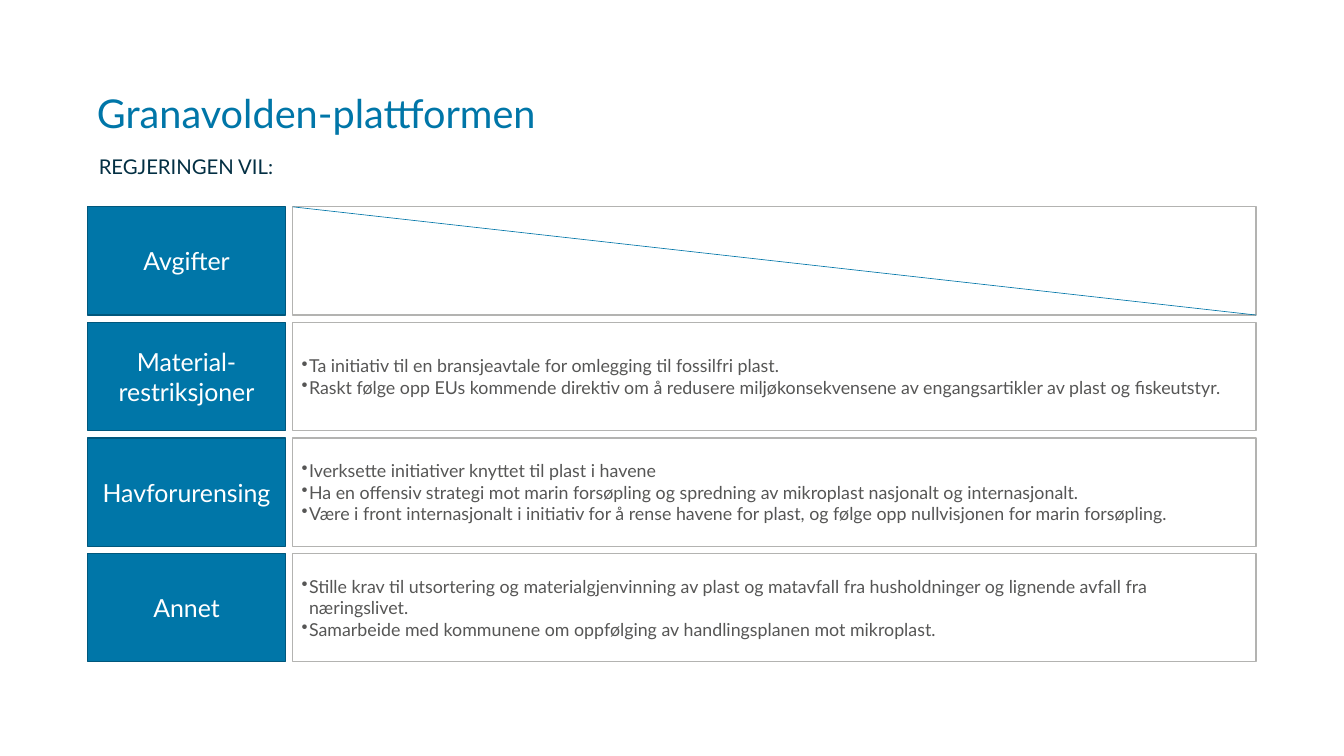
from lxml import etree
from pptx import Presentation
from pptx.dml.color import RGBColor
from pptx.enum.shapes import MSO_CONNECTOR, MSO_SHAPE
from pptx.enum.text import MSO_ANCHOR, MSO_AUTO_SIZE, PP_ALIGN
from pptx.oxml.ns import qn
from pptx.util import Inches, Pt

RECTANGLE = MSO_SHAPE.RECTANGLE
STRAIGHT = MSO_CONNECTOR.STRAIGHT
MIDDLE = MSO_ANCHOR.MIDDLE
NO_AUTOFIT = MSO_AUTO_SIZE.NONE
LEFT, CENTER = PP_ALIGN.LEFT, PP_ALIGN.CENTER

FONT = "Lato"
COLORS = {
    "blue": "0076A8",
    "blue_border": "00577C",
    "navy": "032F43",
    "gray": "565655",
    "gray_border": "B3B3B1",
    "white": "FFFFFF",
}

SLIDE_WIDTH, SLIDE_HEIGHT = 14.69, 8.26
MARGIN = 0.96
CONTENT_WIDTH = SLIDE_WIDTH - 2 * MARGIN
LABEL_WIDTH = 2.16
GAP = 0.08
BULLET_INDENT = 0.08

MEASURES = [
    ("Avgifter", []),
    ("Material-restriksjoner", [
        "Ta initiativ til en bransjeavtale for omlegging til fossilfri plast.",
        "Raskt følge opp EUs kommende direktiv om å redusere miljøkonsekvensene "
        "av engangsartikler av plast og fiskeutstyr.",
    ]),
    ("Havforurensing", [
        "Iverksette initiativer knyttet til plast i havene",
        "Ha en offensiv strategi mot marin forsøpling og spredning av mikroplast "
        "nasjonalt og internasjonalt.",
        "Være i front internasjonalt i initiativ for å rense havene for plast, "
        "og følge opp nullvisjonen for marin forsøpling.",
    ]),
    ("Annet", [
        "Stille krav til utsortering og materialgjenvinning av plast og matavfall "
        "fra husholdninger og lignende avfall fra næringslivet.",
        "Samarbeide med kommunene om oppfølging av handlingsplanen mot mikroplast.",
    ]),
]


def color(name):
    return RGBColor.from_string(COLORS[name])


def set_bullet(paragraph, bullet):
    """Give the paragraph a hanging bullet, or none when bullet is False."""
    properties = paragraph._p.get_or_add_pPr()
    indent = Inches(BULLET_INDENT) if bullet else 0
    properties.set("marL", str(indent))
    properties.set("indent", str(-indent))
    if bullet:
        etree.SubElement(properties, qn("a:buChar")).set("char", "•")
    else:
        etree.SubElement(properties, qn("a:buNone"))


def write_text(shape, lines, size, color_name, align=LEFT, bullet=False,
               line_spacing=1.0, insets=(0.1, 0.05, 0.1, 0.05)):
    frame = shape.text_frame
    frame.word_wrap = True
    frame.auto_size = NO_AUTOFIT
    frame.vertical_anchor = MIDDLE
    (frame.margin_left, frame.margin_top,
     frame.margin_right, frame.margin_bottom) = map(Inches, insets)
    for index, line in enumerate(lines):
        paragraph = frame.add_paragraph() if index else frame.paragraphs[0]
        set_bullet(paragraph, bullet)
        paragraph.alignment = align
        paragraph.line_spacing = line_spacing
        paragraph.space_before = Pt(0)
        run = paragraph.add_run()
        run.text = line
        run.font.name = FONT
        run.font.size = Pt(size)
        run.font.color.rgb = color(color_name)


def place(shape, left, top, width, height):
    shape.left, shape.top = Inches(left), Inches(top)
    shape.width, shape.height = Inches(width), Inches(height)


def add_box(slide, left, top, width, height, border, fill=None):
    shape = slide.shapes.add_shape(
        RECTANGLE, *map(Inches, (left, top, width, height)))
    shape.shadow.inherit = False
    if fill:
        shape.fill.solid()
        shape.fill.fore_color.rgb = color(fill)
    else:
        shape.fill.background()
    shape.line.color.rgb = color(border)
    shape.line.width = Pt(1)
    return shape


def add_diagonal(slide, left, top, width, height):
    """Strike out an empty box from its top left to its bottom right."""
    line = slide.shapes.add_connector(
        STRAIGHT, *map(Inches, (left, top, left + width, top + height)))
    line.line.color.rgb = color("blue")
    line.line.width = Pt(0.5)
    etree.SubElement(line._element.spPr, qn("a:effectLst"))


def fill_heading(slide, left, top, width):
    title, subtitle = slide.shapes.title, slide.placeholders[1]
    place(title, left, top, width, 0.64)
    write_text(title, ["Granavolden-plattformen"], 31.2, "blue",
               line_spacing=0.95, insets=(0.1, 0.05, 0.1, 0.07))
    place(subtitle, left, top + 0.67, width, 0.37)
    write_text(subtitle, ["REGJERINGEN VIL:"], 16, "navy",
               line_spacing=1.1, insets=(0.12, 0.04, 0.12, 0.05))


def add_measures(slide, left, top, width, height):
    row_height = (height - GAP * (len(MEASURES) - 1)) / len(MEASURES)
    text_left = left + LABEL_WIDTH + GAP
    text_width = width - LABEL_WIDTH - GAP
    for row, (label, points) in enumerate(MEASURES):
        row_top = top + row * (row_height + GAP)
        label_box = add_box(slide, left, row_top, LABEL_WIDTH, row_height,
                            border="blue_border", fill="blue")
        write_text(label_box, [label], 19.6, "white", align=CENTER)
        text_area = (text_left, row_top, text_width, row_height)
        text_box = add_box(slide, *text_area, border="gray_border")
        if points:
            write_text(text_box, points, 14, "gray", bullet=True)
        else:
            add_diagonal(slide, *text_area)


def main():
    presentation = Presentation()
    presentation.slide_width = Inches(SLIDE_WIDTH)
    presentation.slide_height = Inches(SLIDE_HEIGHT)
    slide = presentation.slides.add_slide(presentation.slide_layouts[1])
    fill_heading(slide, MARGIN, 0.95, CONTENT_WIDTH)
    add_measures(slide, MARGIN, 2.26, CONTENT_WIDTH, 4.97)
    presentation.save("out.pptx")


if __name__ == "__main__":
    main()
